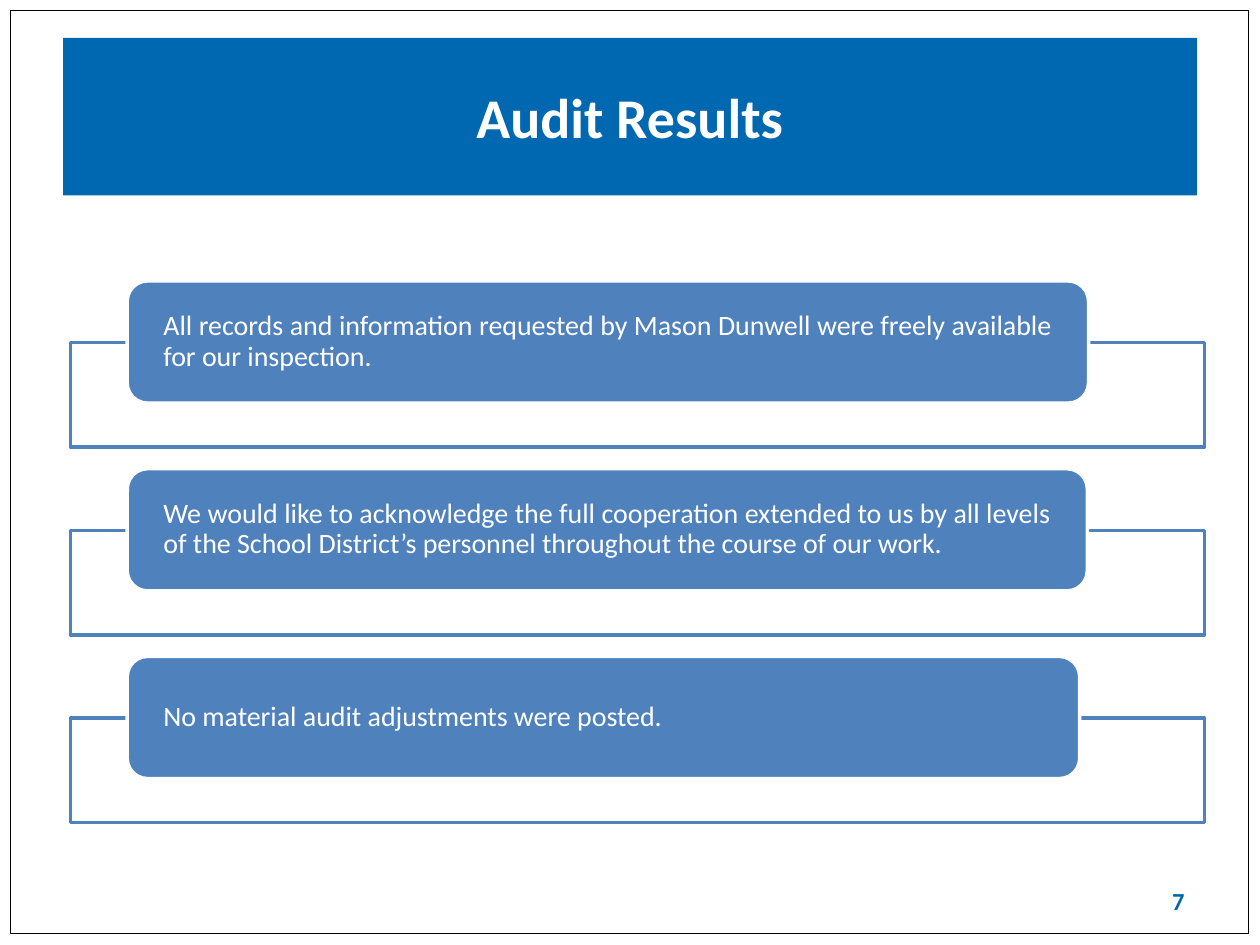
"""Build the audit results slide with three framed statements."""
from typing import NamedTuple

from lxml.etree import SubElement
from pptx import Presentation
from pptx.dml.color import RGBColor
from pptx.enum.shapes import MSO_SHAPE as Shape
from pptx.enum.text import MSO_ANCHOR as Anchor, PP_ALIGN as Align
from pptx.oxml.ns import qn
from pptx.util import Inches, Pt

WHITE = RGBColor(0xFF, 0xFF, 0xFF)
BLACK = RGBColor(0x00, 0x00, 0x00)
BRAND_BLUE = RGBColor(0x00, 0x67, 0xB1)
PANEL_BLUE = RGBColor(0x4F, 0x81, 0xBD)
FONT = "Calibri"
FIRST_TOP = 2.23
PITCH = 1.49
FRAME_DROP = 0.49


class Statement(NamedTuple):
    text: str
    width: float


STATEMENTS = [
    Statement("All records and information requested by Mason Dunwell were freely "
              "available for our inspection.", 7.63),
    Statement("We would like to acknowledge the full cooperation extended to us by all "
              "levels of the School District’s personnel throughout the course of our "
              "work.", 7.62),
    Statement("No material audit adjustments were posted.", 7.56),
]


def write(shape, text: str, size: float, color: RGBColor, align, bold: bool = False):
    """Put one formatted paragraph, vertically centred, into a shape."""
    frame = shape.text_frame
    frame.text = text
    frame.word_wrap = True
    frame.vertical_anchor = Anchor.MIDDLE
    paragraph = frame.paragraphs[0]
    paragraph.alignment = align
    font = paragraph.runs[0].font
    font.name, font.size, font.bold = FONT, Pt(size), bold
    font.color.rgb = color
    return paragraph


def add_box(slide, kind, box: tuple, line: RGBColor, weight: float,
            fill: RGBColor | None = None):
    """Add an outlined preset shape without a shadow."""
    shape = slide.shapes.add_shape(kind, *map(Inches, box))
    shape.shadow.inherit = False
    if fill is None:
        shape.fill.background()
    else:
        shape.fill.solid()
        shape.fill.fore_color.rgb = fill
    shape.line.color.rgb = line
    shape.line.width = Pt(weight)
    return shape


def add_statement(slide, statement: Statement, top: float) -> None:
    """Add an open frame with a rounded panel across its top edge."""
    frame = add_box(slide, Shape.RECTANGLE, (0.56, top + FRAME_DROP, 9, 0.83),
                    PANEL_BLUE, 2, WHITE)
    color = frame.fill._xPr.find(qn("a:solidFill"))[0]
    SubElement(color, qn("a:alpha"), val="90000")
    panel = add_box(slide, Shape.ROUNDED_RECTANGLE, (1.01, top, statement.width, 0.97),
                    WHITE, 2, PANEL_BLUE)
    paragraph = write(panel, statement.text, 16, WHITE, Align.JUSTIFY)
    paragraph.line_spacing = 0.9
    text_frame = panel.text_frame
    text_frame.margin_left = text_frame.margin_right = Inches(0.24)
    text_frame.margin_top = text_frame.margin_bottom = 0


def main() -> None:
    """Assemble and save the slide."""
    presentation = Presentation()
    presentation.slide_width, presentation.slide_height = Inches(10), Inches(7.5)
    slide = presentation.slides.add_slide(presentation.slide_layouts[5])

    border = add_box(slide, Shape.RECTANGLE, (0.08, 0.08, 9.83, 7.33), BLACK, 0.5)
    title = slide.shapes.title
    title._element.addprevious(border._element)

    title.left, title.top = Inches(0.5), Inches(0.3)
    title.width, title.height = Inches(9), Inches(1.25)
    title.fill.solid()
    title.fill.fore_color.rgb = BRAND_BLUE
    write(title, "Audit Results", 32, WHITE, Align.CENTER, bold=True)

    number = slide.shapes.add_textbox(*map(Inches, (7.17, 6.95, 2.33, 0.4)))
    write(number, "7", 14, BRAND_BLUE, Align.RIGHT, bold=True)

    for index, statement in enumerate(STATEMENTS):
        add_statement(slide, statement, FIRST_TOP + index * PITCH)

    presentation.save("out.pptx")


if __name__ == "__main__":
    main()
